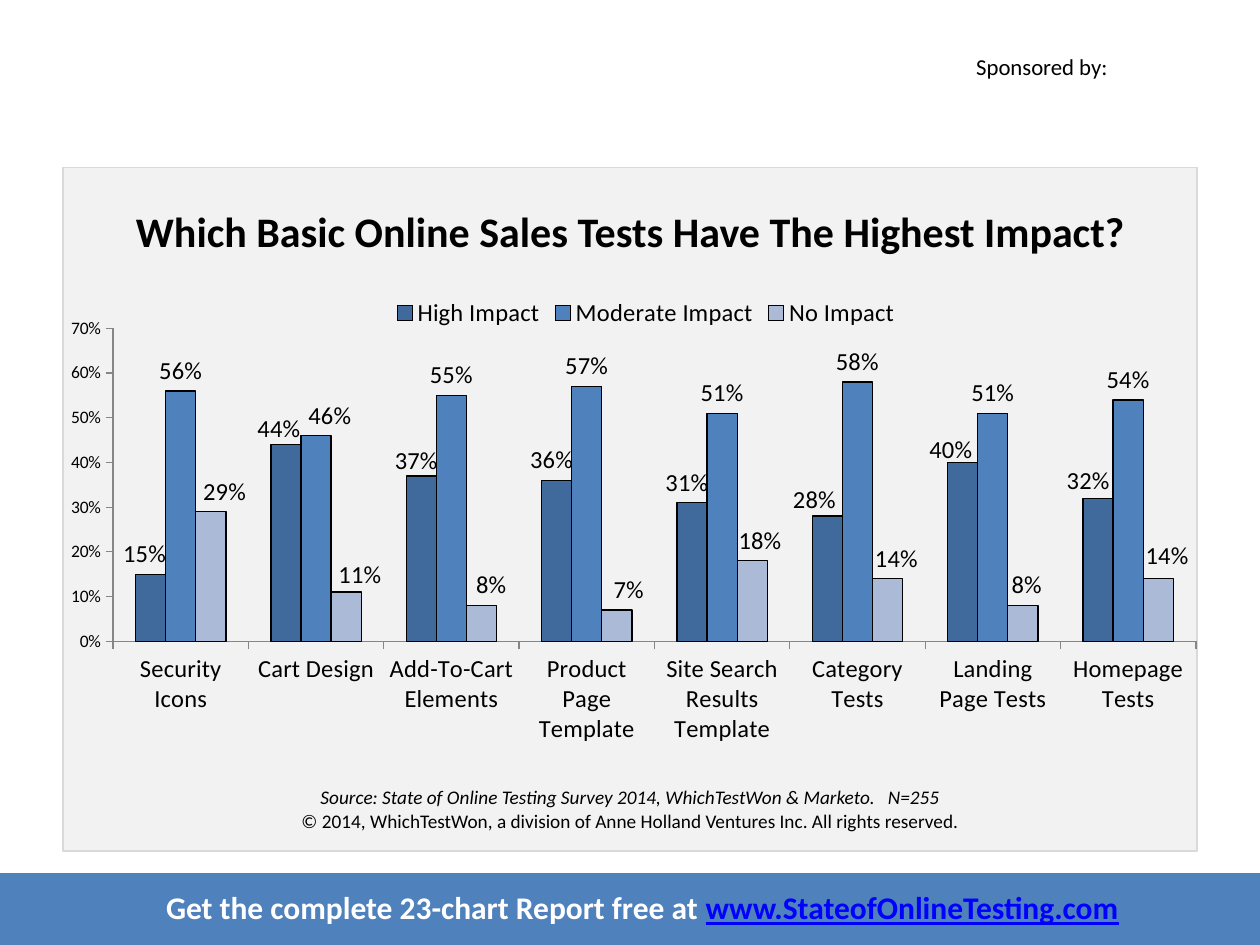
from lxml.etree import SubElement, Element
from pptx import Presentation
from pptx.chart.data import CategoryChartData
from pptx.dml.color import RGBColor
from pptx.enum.chart import XL_CHART_TYPE, XL_LABEL_POSITION, XL_LEGEND_POSITION, XL_TICK_MARK
from pptx.enum.shapes import MSO_SHAPE
from pptx.enum.text import MSO_ANCHOR, PP_ALIGN
from pptx.oxml.ns import qn
from pptx.util import Cm, Pt

BLACK = RGBColor(0x00, 0x00, 0x00)
WHITE = RGBColor(0xFF, 0xFF, 0xFF)
LINK_BLUE = RGBColor(0x00, 0x00, 0xFF)
PANEL_GREY = RGBColor(0xF2, 0xF2, 0xF2)
BORDER_GREY = RGBColor(0xD9, 0xD9, 0xD9)
AXIS_GREY = RGBColor(0x86, 0x86, 0x86)
DARK_BLUE = RGBColor(0x40, 0x69, 0x9C)
MID_BLUE = RGBColor(0x4F, 0x81, 0xBD)
PALE_BLUE = RGBColor(0xAA, 0xBA, 0xD7)
FONT = "Calibri"

# Boxes are left, top, width, height in centimetres
PANELS = [
    ((1.27, 3.38, 22.86, 13.77), PANEL_GREY, BORDER_GREY),
    ((0, 17.6, 25.4, 1.45), MID_BLUE, None),
]

HEADLINE_BOX = (1.32, 4.01, 22.78, 1.27)
HEADLINE = [[("Which Basic Online Sales Tests Have The Highest Impact?",
              {"size": Pt(24), "bold": True})]]

# Each entry: box, alignment, paragraphs of (text, format) runs
CALL = {"size": Pt(18), "bold": True}
SMALL = {"size": Pt(11)}
TEXTS = [
    ((19.43, 0.94, 3.94, 0.81), PP_ALIGN.LEFT, [[("Sponsored by:", {"size": Pt(13)})]]),
    ((1.62, 17.78, 22.66, 1.02), PP_ALIGN.CENTER, [[
        ("Get the complete 23-chart Report free at ", {**CALL, "color": WHITE}),
        ("www.StateofOnlineTesting.com", {**CALL, "color": LINK_BLUE, "underline": True}),
    ]]),
    ((1.32, 15.67, 22.78, 1.27), PP_ALIGN.CENTER, [
        [("Source: State of Online Testing Survey 2014, WhichTestWon & Marketo.   N=255",
          {**SMALL, "italic": True})],
        [("© 2014, WhichTestWon, a division of Anne Holland Ventures Inc. All rights reserved.",
          SMALL)],
    ]),
]

CHART_BOX = (1.27, 5.72, 23.5, 9.96)
PLOT_BOX = (1.01, 0.9, 21.83, 6.31)  # within the chart
CATEGORIES = ["Security Icons", "Cart Design", "Add-To-Cart Elements",
              "Product Page Template", "Site Search Results Template",
              "Category Tests", "Landing Page Tests", "Homepage Tests"]
# Nudges move single labels right and down, in centimetres
SERIES = [
    {"name": "High Impact", "color": DARK_BLUE,
     "values": [0.15, 0.44, 0.37, 0.36, 0.31, 0.28, 0.4, 0.32],
     "nudges": {0: (-0.12, 0), 1: (-0.14, 0.1), 2: (-0.1, 0.1), 3: (-0.1, 0),
                4: (-0.1, 0), 5: (-0.26, 0.08), 6: (-0.24, 0.16), 7: (-0.2, 0.06)}},
    {"name": "Moderate Impact", "color": MID_BLUE,
     "values": [0.56, 0.46, 0.55, 0.57, 0.51, 0.58, 0.51, 0.54],
     "nudges": {1: (0.28, 0)}},
    {"name": "No Impact", "color": PALE_BLUE,
     "values": [0.29, 0.11, 0.08, 0.07, 0.18, 0.14, 0.08, 0.14],
     "nudges": {0: (0.28, 0), 1: (0.28, 0.06), 2: (0.2, 0), 3: (0.24, 0),
                4: (0.16, 0), 5: (0.18, 0), 6: (0.08, 0), 7: (0.18, -0.06)}},
]


def place(shape, box):
    shape.left, shape.top, shape.width, shape.height = map(Cm, box)


def format_font(font, settings):
    font.name = FONT
    for key, value in {"color": BLACK, **settings}.items():
        if key == "color":
            font.color.rgb = value
        else:
            setattr(font, key, value)


def write(frame, paragraphs, alignment):
    frame.word_wrap = True
    frame.vertical_anchor = MSO_ANCHOR.MIDDLE
    for number, runs in enumerate(paragraphs):
        paragraph = frame.add_paragraph() if number else frame.paragraphs[0]
        paragraph.alignment = alignment
        for text, settings in runs:
            run = paragraph.add_run()
            run.text = text
            format_font(run.font, settings)


def manual_layout(**settings):
    """Return a c:layout element with the given c:manualLayout settings."""
    layout = Element(qn("c:layout"))
    manual = SubElement(layout, qn("c:manualLayout"))
    for key, value in settings.items():
        SubElement(manual, qn(f"c:{key}")).set("val", str(value))
    return layout


def chart_fractions(lengths):
    """Turn centimetres along x, y, w, h into fractions of the chart."""
    sides = CHART_BOX[2:] * 2
    return {key: round(length / side, 4) for key, length, side in zip("xywh", lengths, sides)}


def style_series(series, color, nudges):
    series.smooth = False if hasattr(series, "smooth") else None
    series.format.fill.solid()
    series.format.fill.fore_color.rgb = color
    series.format.line.color.rgb = BLACK
    series.format.line.width = Pt(0.75)
    labels = series.data_labels
    labels.show_value = True
    labels.position = XL_LABEL_POSITION.OUTSIDE_END
    labels.number_format = "0%"
    labels.number_format_is_linked = False
    format_font(labels.font, {"size": Pt(14)})
    for index, nudge in nudges.items():
        label = series.points[index].data_label
        format_font(label.font, {"size": Pt(14)})
        label.position = XL_LABEL_POSITION.OUTSIDE_END
    for label_xml, nudge in zip(labels._element.findall(qn("c:dLbl")), nudges.values()):
        label_xml.insert(1, manual_layout(**chart_fractions(nudge)))


def add_impact_chart(slide):
    data = CategoryChartData(number_format="0%")
    data.categories = CATEGORIES
    for entry in SERIES:
        data.add_series(entry["name"], entry["values"])
    chart = slide.shapes.add_chart(
        XL_CHART_TYPE.COLUMN_CLUSTERED, *map(Cm, CHART_BOX), data).chart
    format_font(chart.font, {"size": Pt(10)})
    chart.has_title = False
    chart.has_legend = True
    chart.legend.position = XL_LEGEND_POSITION.TOP
    chart.legend.include_in_layout = False
    format_font(chart.legend.font, {"size": Pt(14)})

    plot = chart.plots[0]
    plot.gap_width, plot.overlap, plot.vary_by_categories = 150, 0, False
    for series, entry in zip(plot.series, SERIES):
        style_series(series, entry["color"], entry["nudges"])

    for axis, size in ((chart.category_axis, 14), (chart.value_axis, 10)):
        axis.has_major_gridlines = False
        axis.major_tick_mark = XL_TICK_MARK.OUTSIDE
        axis.format.line.color.rgb = AXIS_GREY
        format_font(axis.tick_labels.font, {"size": Pt(size)})
    scale = {"minimum_scale": 0, "maximum_scale": 0.7, "major_unit": 0.1}
    for key, value in scale.items():
        setattr(chart.value_axis, key, value)
    chart.value_axis.tick_labels.number_format = "0%"
    chart.value_axis.tick_labels.number_format_is_linked = False

    plot_area = chart._chartSpace.chart.plotArea
    for layout in plot_area.findall(qn("c:layout")):
        plot_area.remove(layout)
    plot_area.insert(0, manual_layout(
        layoutTarget="inner", xMode="edge", yMode="edge", **chart_fractions(PLOT_BOX)))


def main():
    presentation = Presentation()
    presentation.slide_width, presentation.slide_height = Cm(25.4), Cm(19.05)
    slide = presentation.slides.add_slide(presentation.slide_layouts[5])

    for box, fill, border in PANELS:
        panel = slide.shapes.add_shape(MSO_SHAPE.RECTANGLE, *map(Cm, box))
        panel.shadow.inherit = False
        panel.fill.solid()
        panel.fill.fore_color.rgb = fill
        if border:
            panel.line.color.rgb = border
            panel.line.width = Pt(1)
        else:
            panel.line.fill.background()

    add_impact_chart(slide)
    for box, alignment, paragraphs in TEXTS:
        write(slide.shapes.add_textbox(*map(Cm, box)).text_frame, paragraphs, alignment)

    headline = slide.shapes.title
    place(headline, HEADLINE_BOX)
    write(headline.text_frame, HEADLINE, PP_ALIGN.CENTER)
    slide.shapes._spTree.append(headline._element)  # bring in front of the panel
    presentation.save("out.pptx")


if __name__ == "__main__":
    main()
